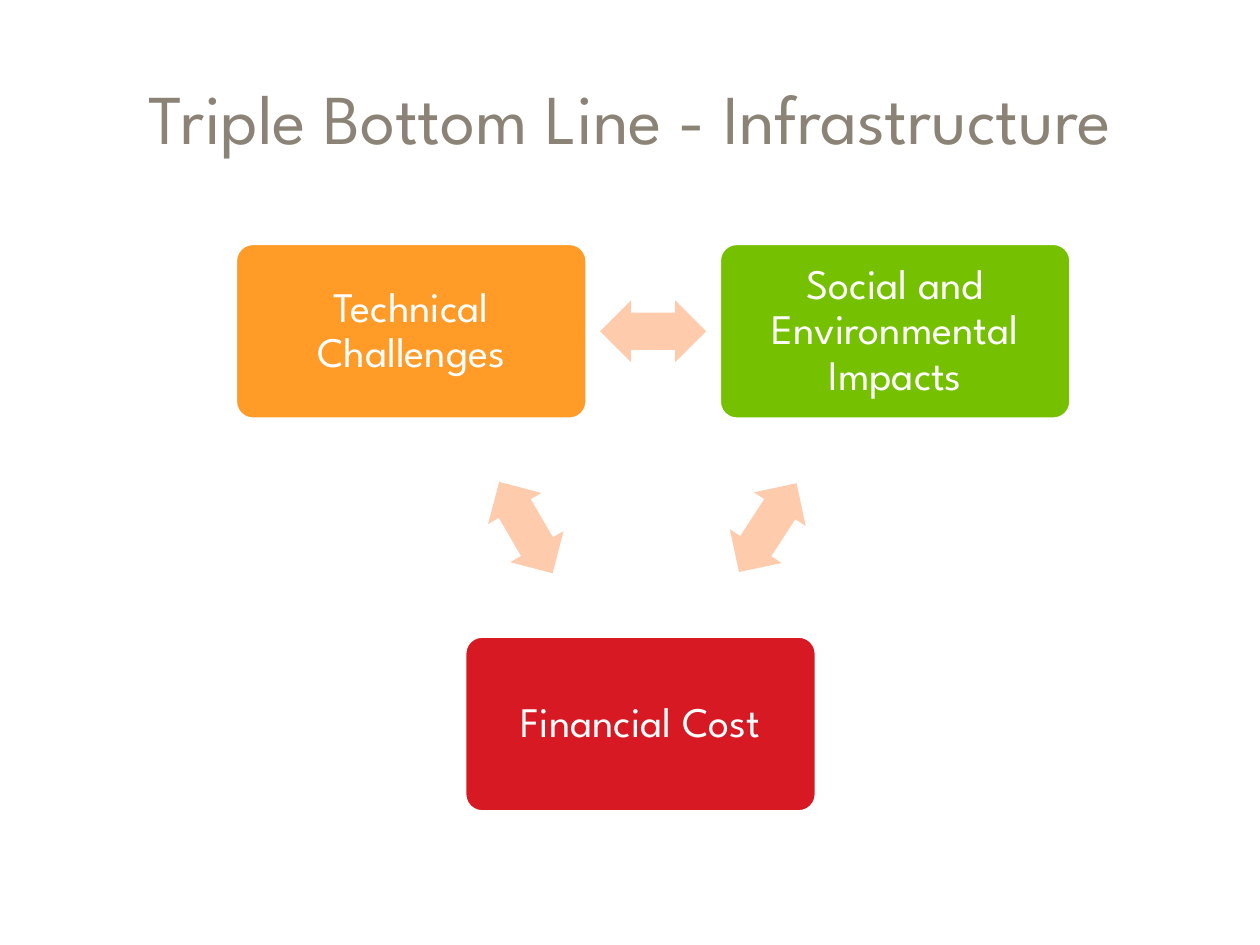
import pptx
import pptx.dml.color
import pptx.enum.shapes
import pptx.enum.text
import pptx.util
from dataclasses import dataclass

Pt = pptx.util.Pt
SHAPES = pptx.enum.shapes.MSO_SHAPE


@dataclass(frozen=True)
class Theme:
    font: str = "League Spartan"
    title_size: int = 40
    label_size: int = 24
    title: str = "8B8376"
    white: str = "FFFFFF"
    technical: str = "FF9B26"
    social: str = "75C000"
    financial: str = "D71923"
    arrow: str = "FFCBAD"


def rgb(value):
    return pptx.dml.color.RGBColor.from_string(value)


class SlideBuilder:
    box_width, box_height = 201, 100.5
    arrow_width, arrow_height = 60.5, 35.3

    def __init__(self, slide, theme):
        self.slide = slide
        self.theme = theme

    def set_text(self, frame, text, size, color):
        """Fill a text frame with one centred, vertically centred paragraph."""
        frame.word_wrap = True
        frame.auto_size = pptx.enum.text.MSO_AUTO_SIZE.NONE
        frame.vertical_anchor = pptx.enum.text.MSO_ANCHOR.MIDDLE
        para = frame.paragraphs[0]
        para.alignment = pptx.enum.text.PP_ALIGN.CENTER
        span = para.add_run()
        span.text = text
        span.font.name = self.theme.font
        span.font.size = Pt(size)
        span.font.color.rgb = rgb(color)
        return para

    def title(self, text):
        title = self.slide.shapes.title
        title.left, title.top = Pt(6), Pt(38.9)
        title.width, title.height = Pt(708), Pt(55.4)
        self.set_text(title.text_frame, text, self.theme.title_size, self.theme.title)

    def centred_shape(self, kind, center, width, height, color):
        x, y = center
        shape = self.slide.shapes.add_shape(
            kind, Pt(x - width / 2), Pt(y - height / 2), Pt(width), Pt(height))
        shape.shadow.inherit = False
        shape.fill.solid()
        shape.fill.fore_color.rgb = rgb(color)
        return shape

    def box(self, text, center, color):
        box = self.centred_shape(SHAPES.ROUNDED_RECTANGLE, center,
                                 self.box_width, self.box_height, color)
        box.adjustments[0] = 0.1
        box.line.color.rgb = rgb(self.theme.white)
        box.line.width = Pt(2)
        frame = box.text_frame
        frame.margin_left = frame.margin_right = Pt(7.2)
        frame.margin_top = frame.margin_bottom = Pt(7.2)
        para = self.set_text(frame, text, self.theme.label_size, self.theme.white)
        para.line_spacing = 0.9

    def double_arrow(self, center, rotation=0):
        arrow = self.centred_shape(SHAPES.LEFT_RIGHT_ARROW, center,
                                   self.arrow_width, self.arrow_height,
                                   self.theme.arrow)
        arrow.adjustments[0] = 0.6
        arrow.adjustments[1] = 0.5
        arrow.line.fill.background()
        arrow.rotation = rotation


def midpoint(start, end):
    return (start[0] + end[0]) / 2, (start[1] + end[1]) / 2


def main():
    theme = Theme()
    deck = pptx.Presentation()
    deck.slide_width, deck.slide_height = Pt(720), Pt(540)
    page = SlideBuilder(deck.slides.add_slide(deck.slide_layouts[5]), theme)
    page.title("Triple Bottom Line - Infrastructure")

    technical, social, financial = (235, 189.3), (511.5, 189.3), (366, 413.7)
    page.box("Technical Challenges", technical, theme.technical)
    page.box("Social and Environmental Impacts", social, theme.social)
    page.box("Financial Cost", financial, theme.financial)

    for start, end, rotation in (
        (technical, social, 0),
        (social, financial, 303),
        (financial, technical, 59.7),
    ):
        page.double_arrow(midpoint(start, end), rotation)

    deck.save("out.pptx")


if __name__ == "__main__":
    main()
